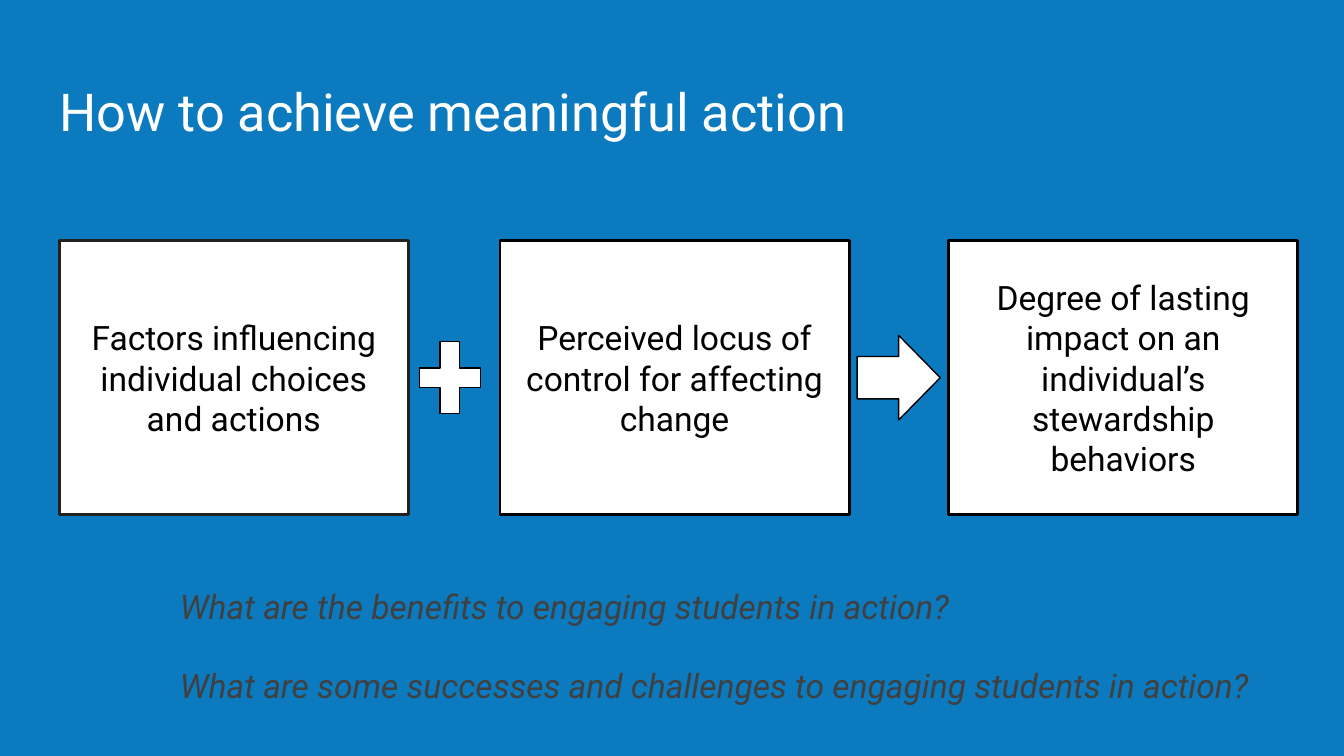
from pptx import Presentation
from pptx.dml.color import RGBColor
from pptx.enum.shapes import MSO_SHAPE
from pptx.enum.text import MSO_ANCHOR, MSO_AUTO_SIZE, PP_ALIGN
from pptx.util import Cm, Pt

RECTANGLE, PLUS, ARROW = MSO_SHAPE.RECTANGLE, MSO_SHAPE.MATH_PLUS, MSO_SHAPE.RIGHT_ARROW
TOP, MIDDLE = MSO_ANCHOR.TOP, MSO_ANCHOR.MIDDLE
LEFT, CENTER = PP_ALIGN.LEFT, PP_ALIGN.CENTER
NO_AUTOFIT = MSO_AUTO_SIZE.NONE

# Content; lengths in centimetres
TITLE = "How to achieve meaningful action"
BOXES = [  # left, line colour, text
    (1.12, "soft_black", "Factors influencing individual choices and actions"),
    (9.45, "black", "Perceived locus of control for affecting change"),
    (17.93, "black", "Degree of lasting impact on an individual’s stewardship behaviors"),
]
SIGNS = [  # preset, left, width, height, adjustments
    (PLUS, 7.72, 1.57, 1.85, [0.235]),
    (ARROW, 16.2, 1.57, 1.6, [0.5, 0.5]),
]
QUESTIONS = [
    "What are the benefits to engaging students in action?",
    "What are some successes and challenges to engaging students in action?",
]

BOX_TOP, BOX_WIDTH, BOX_HEIGHT = 4.55, 6.6, 5.18
ROW_MIDDLE = BOX_TOP + BOX_HEIGHT / 2

THEME = {
    "blue": RGBColor(0x0B, 0x7A, 0xBF),
    "white": RGBColor(0xFF, 0xFF, 0xFF),
    "black": RGBColor(0x00, 0x00, 0x00),
    "soft_black": RGBColor(0x21, 0x21, 0x21),
    "gray": RGBColor(0x40, 0x40, 0x40),
    "font": "Roboto",
    "title_size": Pt(28),
    "body_size": Pt(18),
    "question_gap": Pt(21),
    "inset": Cm(0.25),
}


def set_text(shape, lines, color, size="body_size", align=LEFT, anchor=TOP, italic=False, gap=None):
    frame = shape.text_frame
    frame_format = {"word_wrap": True, "auto_size": NO_AUTOFIT, "vertical_anchor": anchor}
    for side in ("left", "top", "right", "bottom"):
        frame_format[f"margin_{side}"] = THEME["inset"]
    for name, value in frame_format.items():
        setattr(frame, name, value)
    for index, line in enumerate(lines):
        paragraph = frame.add_paragraph() if index else frame.paragraphs[0]
        paragraph.alignment = align
        if index and gap:
            paragraph.space_before = gap
        run = paragraph.add_run()
        run.text = line
        run.font.color.rgb = THEME[color]
        font_format = {"name": THEME["font"], "size": THEME[size], "italic": italic}
        for name, value in font_format.items():
            setattr(run.font, name, value)


def add_outlined_shape(slide, preset, bounds, line_color, line_width):
    shape = slide.shapes.add_shape(preset, *map(Cm, bounds))
    shape.shadow.inherit = False
    shape.fill.solid()
    shape.fill.fore_color.rgb = THEME["white"]
    shape.line.color.rgb = THEME[line_color]
    shape.line.width = Pt(line_width)
    return shape


presentation = Presentation()
presentation.slide_width, presentation.slide_height = Cm(25.4), Cm(14.29)
slide = presentation.slides.add_slide(presentation.slide_layouts[5])
slide.background.fill.solid()
slide.background.fill.fore_color.rgb = THEME["blue"]

# Title
title = slide.shapes.title
title.left, title.top, title.width, title.height = map(Cm, (0.87, 1.24, 23.67, 1.6))
set_text(title, [TITLE], "white", size="title_size")

# Boxes
for left, line_color, text in BOXES:
    bounds = (left, BOX_TOP, BOX_WIDTH, BOX_HEIGHT)
    box = add_outlined_shape(slide, RECTANGLE, bounds, line_color, 1.5)
    set_text(box, [text], "black", align=CENTER, anchor=MIDDLE)

# Questions
questions = slide.shapes.add_textbox(*map(Cm, (3.15, 10.82, 21.92, 2.9)))
set_text(questions, QUESTIONS, "gray", italic=True, gap=THEME["question_gap"])

# Plus and arrow, centred on the row of boxes
for preset, left, width, height, adjustments in SIGNS:
    bounds = (left, ROW_MIDDLE - height / 2, width, height)
    sign = add_outlined_shape(slide, preset, bounds, "black", 0.75)
    for index, value in enumerate(adjustments):
        sign.adjustments[index] = value

presentation.save("out.pptx")
